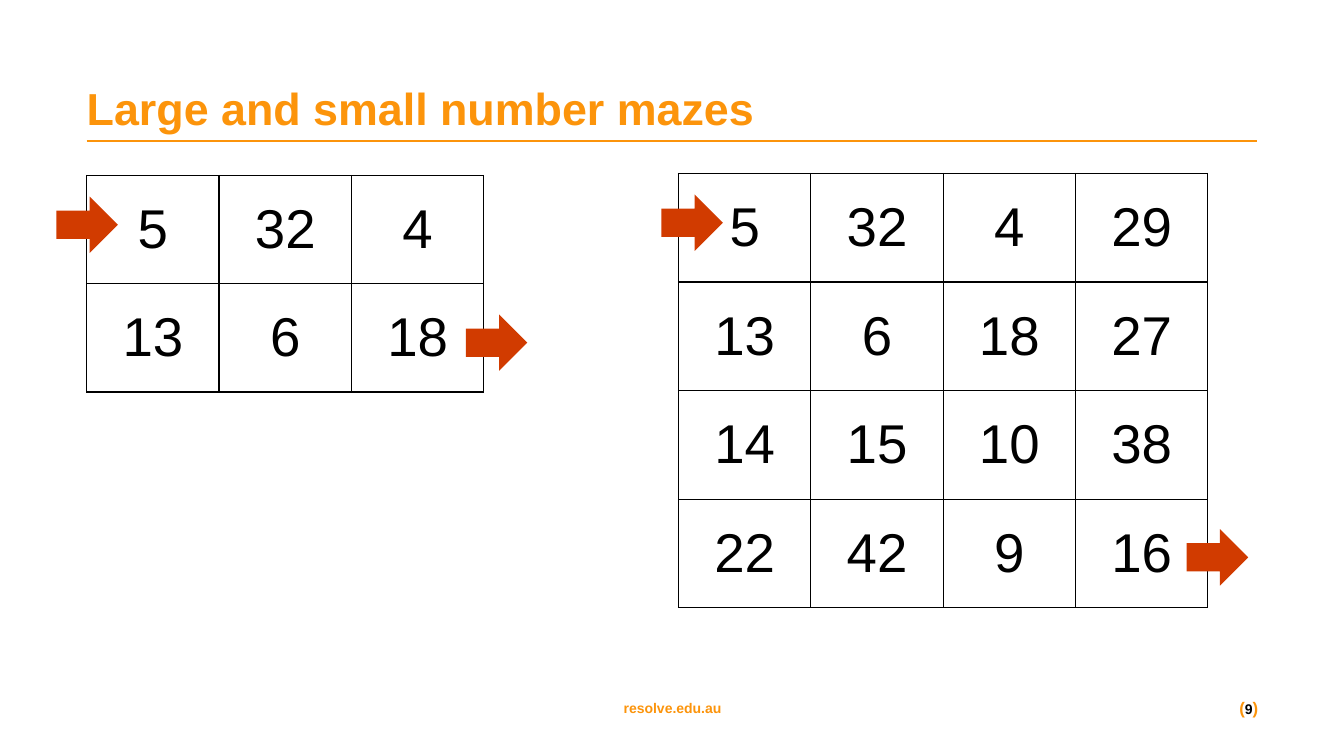
import dataclasses

import pptx
import pptx.dml.color
import pptx.enum.shapes
import pptx.enum.text
import pptx.oxml
import pptx.oxml.ns
import pptx.util

Inches = pptx.util.Inches
Pt = pptx.util.Pt
Align = pptx.enum.text.PP_ALIGN
Anchor = pptx.enum.text.MSO_ANCHOR


@dataclasses.dataclass(frozen=True)
class Theme:
    font: str = "Arial"
    orange: str = "FC940B"
    arrow: str = "D13B00"
    black: str = "000000"
    title_size: int = 32
    number_size: int = 39
    footer_size: int = 10
    bracket_size: int = 12


THEME = Theme()
ARROW_WIDTH, ARROW_HEIGHT = 0.61, 0.56
SMALL_MAZE = [[5, 32, 4], [13, 6, 18]]
LARGE_MAZE = [[5, 32, 4, 29], [13, 6, 18, 27], [14, 15, 10, 38], [22, 42, 9, 16]]


def rgb(value):
    return pptx.dml.color.RGBColor.from_string(value)


def style_span(span, size, color, bold=False):
    span.font.name = THEME.font
    span.font.size = Pt(size)
    span.font.bold = bold
    span.font.color.rgb = rgb(color)


def prepare_frame(frame, align):
    frame.word_wrap = True
    frame.auto_size = pptx.enum.text.MSO_AUTO_SIZE.NONE
    frame.vertical_anchor = Anchor.MIDDLE
    frame.margin_left = frame.margin_right = 0
    frame.margin_top = frame.margin_bottom = 0
    frame.paragraphs[0].alignment = align


def add_heading(page, left, top, width, height):
    rule_top = Inches(top + height + 0.04)
    rule = page.shapes.add_connector(
        pptx.enum.shapes.MSO_CONNECTOR.STRAIGHT,
        Inches(left), rule_top, Inches(left + width), rule_top)
    rule.line.color.rgb = rgb(THEME.orange)
    rule.line.width = Pt(1.5)
    rule._element.spPr.append(pptx.oxml.parse_xml(
        f'<a:effectLst {pptx.oxml.ns.nsdecls("a")}/>'))
    title = page.shapes.title
    title.left, title.top = Inches(left), Inches(top)
    title.width, title.height = Inches(width), Inches(height)
    title.text_frame.text = "Large and small number mazes"
    prepare_frame(title.text_frame, Align.LEFT)
    style_span(title.text_frame.paragraphs[0].runs[0],
               THEME.title_size, THEME.orange, True)


def add_footer_text(page, left, top, width, height, align, spans):
    box = page.shapes.add_textbox(
        Inches(left), Inches(top), Inches(width), Inches(height))
    prepare_frame(box.text_frame, align)
    for text, size, color in spans:
        span = box.text_frame.paragraphs[0].add_run()
        span.text = text
        style_span(span, size, color, True)


def add_footer(page, top, height):
    add_footer_text(page, 4.36, top, 4.62, height, Align.CENTER,
                    [("resolve.edu.au", THEME.footer_size, THEME.orange)])
    add_footer_text(page, 11.69, top, 0.79, height, Align.RIGHT,
                    [("(", THEME.bracket_size, THEME.orange),
                     ("9", THEME.footer_size, THEME.black),
                     (")", THEME.bracket_size, THEME.orange)])


def border_cell(cell):
    properties = cell._tc.get_or_add_tcPr()
    for position, side in enumerate(("lnL", "lnR", "lnT", "lnB")):
        properties.insert(position, pptx.oxml.parse_xml(
            f'<a:{side} {pptx.oxml.ns.nsdecls("a")} w="{Pt(1)}"><a:solidFill>'
            f'<a:srgbClr val="{THEME.black}"/></a:solidFill></a:{side}>'))


def add_arrow(page, left, top):
    arrow = page.shapes.add_shape(
        pptx.enum.shapes.MSO_SHAPE.RIGHT_ARROW, Inches(left), Inches(top),
        Inches(ARROW_WIDTH), Inches(ARROW_HEIGHT))
    arrow.shadow.inherit = False
    arrow.fill.solid()
    arrow.fill.fore_color.rgb = rgb(THEME.arrow)
    arrow.line.fill.background()


def add_maze(page, left, top, width, height, numbers, entry, leave):
    rows, columns = len(numbers), len(numbers[0])
    table = page.shapes.add_table(
        rows, columns, Inches(left), Inches(top),
        Inches(width), Inches(height)).table
    table.first_row = table.horz_banding = False
    for row, values in enumerate(numbers):
        for column, value in enumerate(values):
            cell = table.cell(row, column)
            cell.fill.background()
            border_cell(cell)
            cell.vertical_anchor = Anchor.MIDDLE
            cell.text_frame.text = str(value)
            para = cell.text_frame.paragraphs[0]
            para.alignment = Align.CENTER
            style_span(para.runs[0], THEME.number_size, THEME.black)
    for across, down in (entry, leave):
        add_arrow(page, left + across, top + down)


def main():
    deck = pptx.Presentation()
    deck.slide_width, deck.slide_height = Inches(13.33), Inches(7.5)
    page = deck.slides.add_slide(deck.slide_layouts[5])
    add_heading(page, 0.86, 0.78, 11.61, 0.58)
    add_footer(page, 6.85, 0.34)
    add_maze(page, 0.86, 1.74, 3.94, 2.15, SMALL_MAZE, (-0.3, 0.21), (3.76, 1.38))
    add_maze(page, 6.73, 1.72, 5.25, 4.31, LARGE_MAZE, (-0.17, 0.21), (5.04, 3.53))
    deck.save("out.pptx")


if __name__ == "__main__":
    main()
